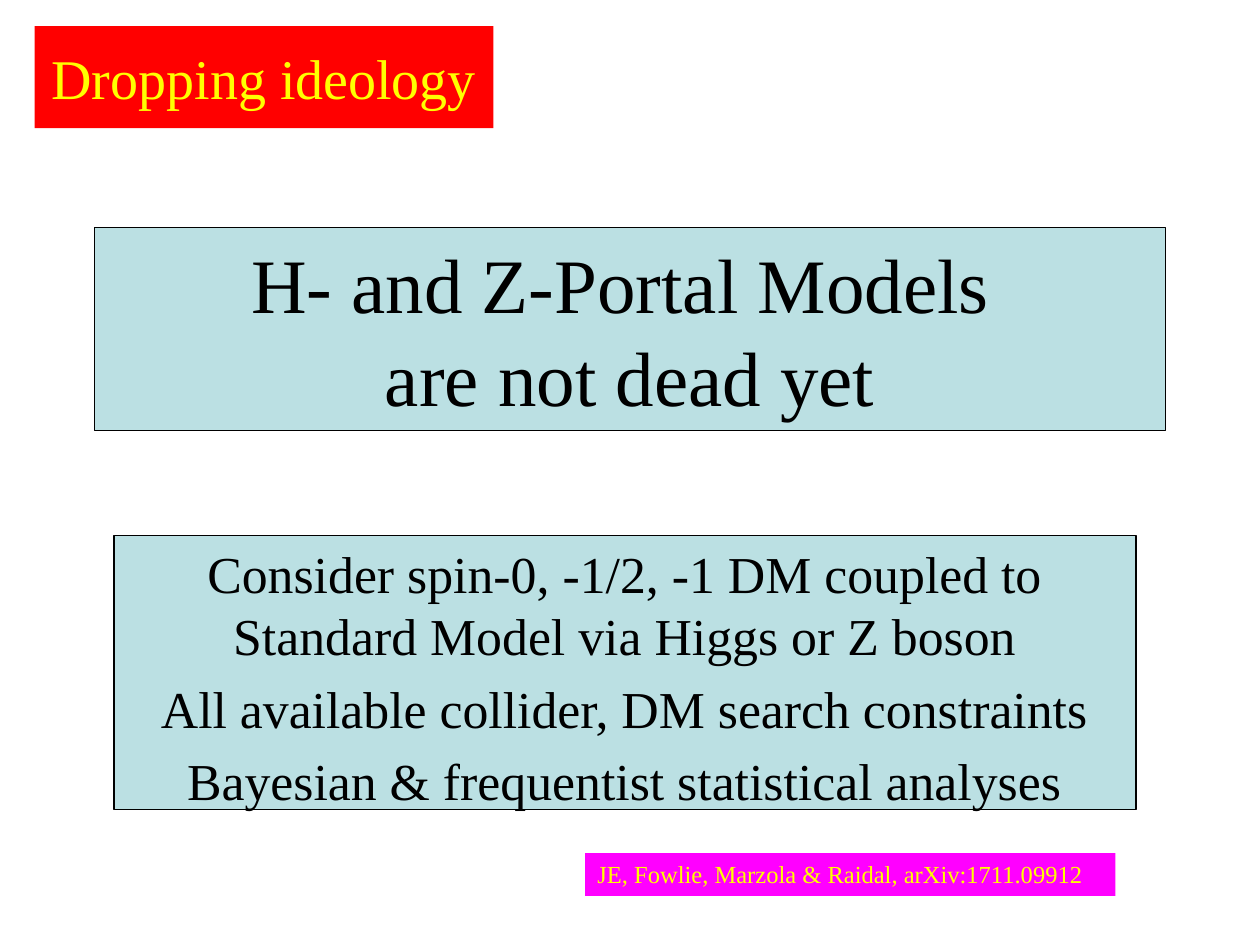
"""Build the slide on H- and Z-portal dark matter models."""
import pptx
import pptx.util
import pptx.dml.color
import pptx.enum.shapes
import pptx.enum.text

WIDTH, HEIGHT = pptx.util.Inches(10), pptx.util.Inches(7.5)
ALIGN = pptx.enum.text.PP_ALIGN
ANCHOR = pptx.enum.text.MSO_ANCHOR
BLACK, YELLOW, RED, MAGENTA, PALE_BLUE = "000000", "FFFF00", "FF0000", "FF00FF", "BBE0E3"

PANELS = [
    dict(paragraphs=["H- and Z-Portal Models \vare not dead yet"],
         share=(7.5, 24.1, 85, 21.47), fill=PALE_BLUE, outline=BLACK, size=44),
    dict(paragraphs=["JE, Fowlie, Marzola & Raidal, arXiv:1711.09912"],
         share=(46.43, 90.27, 42.1, 4.53), fill=MAGENTA, color=YELLOW,
         size=14, align=ALIGN.LEFT, anchor=ANCHOR.TOP),
    dict(paragraphs=["Consider spin-0, -1/2, -1 DM coupled to Standard Model via Higgs or Z boson",
                     "All available collider, DM search constraints",
                     "Bayesian & frequentist statistical analyses"],
         share=(9.06, 56.67, 81.1, 29), fill=PALE_BLUE, outline=BLACK,
         size=29.6, anchor=ANCHOR.TOP),
    dict(paragraphs=["Dropping ideology"],
         share=(2.76, 2.76, 36.4, 10.8), fill=RED, color=YELLOW, size=32),
]


def rgb(value):
    return pptx.dml.color.RGBColor.from_string(value)


def add_panel(slide, paragraphs, share, fill, size, outline=None, color=BLACK,
              align=ALIGN.CENTER, anchor=ANCHOR.MIDDLE):
    left, top, width, height = (
        int(part * whole / 100) for part, whole in zip(share, (WIDTH, HEIGHT) * 2))
    panel = slide.shapes.add_shape(
        pptx.enum.shapes.MSO_SHAPE.RECTANGLE, left, top, width, height)
    panel.shadow.inherit = False
    panel.fill.solid()
    panel.fill.fore_color.rgb = rgb(fill)
    if outline:
        panel.line.color.rgb = rgb(outline)
        panel.line.width = pptx.util.Pt(0.75)
    else:
        panel.line.fill.background()

    frame = panel.text_frame
    frame.word_wrap = True
    frame.vertical_anchor = anchor
    for index, wording in enumerate(paragraphs):
        paragraph = frame.add_paragraph() if index else frame.paragraphs[0]
        paragraph.text = wording
        paragraph.alignment = align
        if index:
            paragraph.space_before = pptx.util.Pt(round(size * 0.2, 1))
        paragraph.font.name = "Times New Roman"
        paragraph.font.size = pptx.util.Pt(size)
        paragraph.font.color.rgb = rgb(color)


def main():
    deck = pptx.Presentation()
    deck.slide_width, deck.slide_height = WIDTH, HEIGHT
    slide = deck.slides.add_slide(deck.slide_layouts[6])
    for panel in PANELS:
        add_panel(slide, **panel)
    deck.save("out.pptx")


if __name__ == "__main__":
    main()
